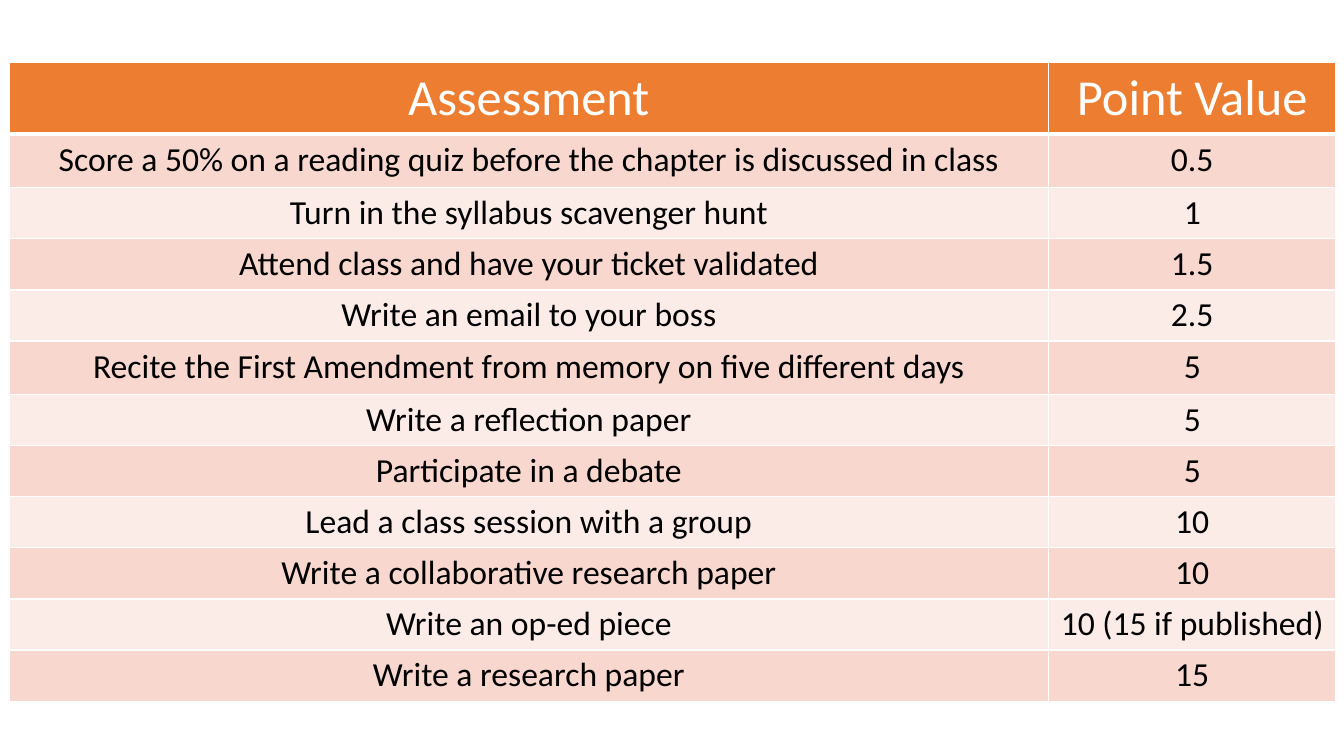
import pptx
import pptx.dml.color
import pptx.enum.text
import pptx.oxml
import pptx.oxml.ns
import pptx.util

COLORS = {
    "header": "ED7D31",
    "odd": "F8D7CE",
    "even": "FCECE8",
    "white": "FFFFFF",
    "text": "000000",
}
FONT = "Calibri"
HEADER = ("Assessment", "Point Value")
ASSESSMENTS = [
    ("Score a 50% on a reading quiz before the chapter is discussed in class", "0.5"),
    ("Turn in the syllabus scavenger hunt", "1"),
    ("Attend class and have your ticket validated", "1.5"),
    ("Write an email to your boss", "2.5"),
    ("Recite the First Amendment from memory on five different days", "5"),
    ("Write a reflection paper", "5"),
    ("Participate in a debate", "5"),
    ("Lead a class session with a group", "10"),
    ("Write a collaborative research paper", "10"),
    ("Write an op-ed piece", "10 (15 if published)"),
    ("Write a research paper", "15"),
]
HEADER_HEIGHT, ROW_HEIGHT, TALL_HEIGHT = 0.7, 0.5, 0.53
TALL_ROWS = (1, 5)
POINTS_SHARE = 0.2166  # share of the table width


def rgb(name):
    return pptx.dml.color.RGBColor.from_string(COLORS[name])


def set_borders(cell, bottom):
    """White rules on all sides; only the bottom width varies."""
    props = cell._tc.get_or_add_tcPr()
    ns = pptx.oxml.ns.nsdecls("a")
    for i, (side, width) in enumerate(zip("LRTB", (1, 1, 1, bottom))):
        props.insert(i, pptx.oxml.parse_xml(
            f'<a:ln{side} {ns} w="{pptx.util.Pt(width)}"><a:solidFill>'
            f'<a:srgbClr val="{COLORS["white"]}"/></a:solidFill></a:ln{side}>'))


def fill_cell(cell, text, size, color, fill, bottom):
    cell.fill.solid()
    cell.fill.fore_color.rgb = rgb(fill)
    set_borders(cell, bottom)
    p = cell.text_frame.paragraphs[0]
    p.alignment = pptx.enum.text.PP_ALIGN.CENTER
    r = p.add_run()
    r.text = text
    r.font.name = FONT
    r.font.size = pptx.util.Pt(size)
    r.font.color.rgb = rgb(color)


def add_assessment_table(slide, left, top, width):
    rows = [HEADER] + ASSESSMENTS
    heights = [HEADER_HEIGHT] + [
        TALL_HEIGHT if i in TALL_ROWS else ROW_HEIGHT for i in range(1, len(rows))]
    inches = pptx.util.Inches
    table = slide.shapes.add_table(
        len(rows), len(HEADER), inches(left), inches(top),
        inches(width), inches(sum(heights))).table

    # Columns: assessment, then points
    for column, share in zip(table.columns, (1 - POINTS_SHARE, POINTS_SHARE)):
        column.width = inches(width * share)

    # Header row, then alternating bands
    for i, (texts, height) in enumerate(zip(rows, heights)):
        table.rows[i].height = inches(height)
        if i == 0:
            style = (36, "white", "header", 3)
        else:
            style = (24, "text", "odd" if i % 2 else "even", 1)
        for cell, text in zip(table.rows[i].cells, texts):
            fill_cell(cell, text, *style)

    # The rule under the header is shared with the first row's top
    first_row = table.rows[1].cells
    for cell in first_row:
        top_rule = cell._tc.tcPr.find(pptx.oxml.ns.qn("a:lnT"))
        top_rule.set("w", str(pptx.util.Pt(3)))


def main():
    prs = pptx.Presentation()
    prs.slide_width = pptx.util.Inches(13.33)
    prs.slide_height = pptx.util.Inches(7.5)
    slide = prs.slides.add_slide(prs.slide_layouts[6])
    add_assessment_table(slide, 0.09, 0.62, 13.16)
    prs.save("out.pptx")


if __name__ == "__main__":
    main()
